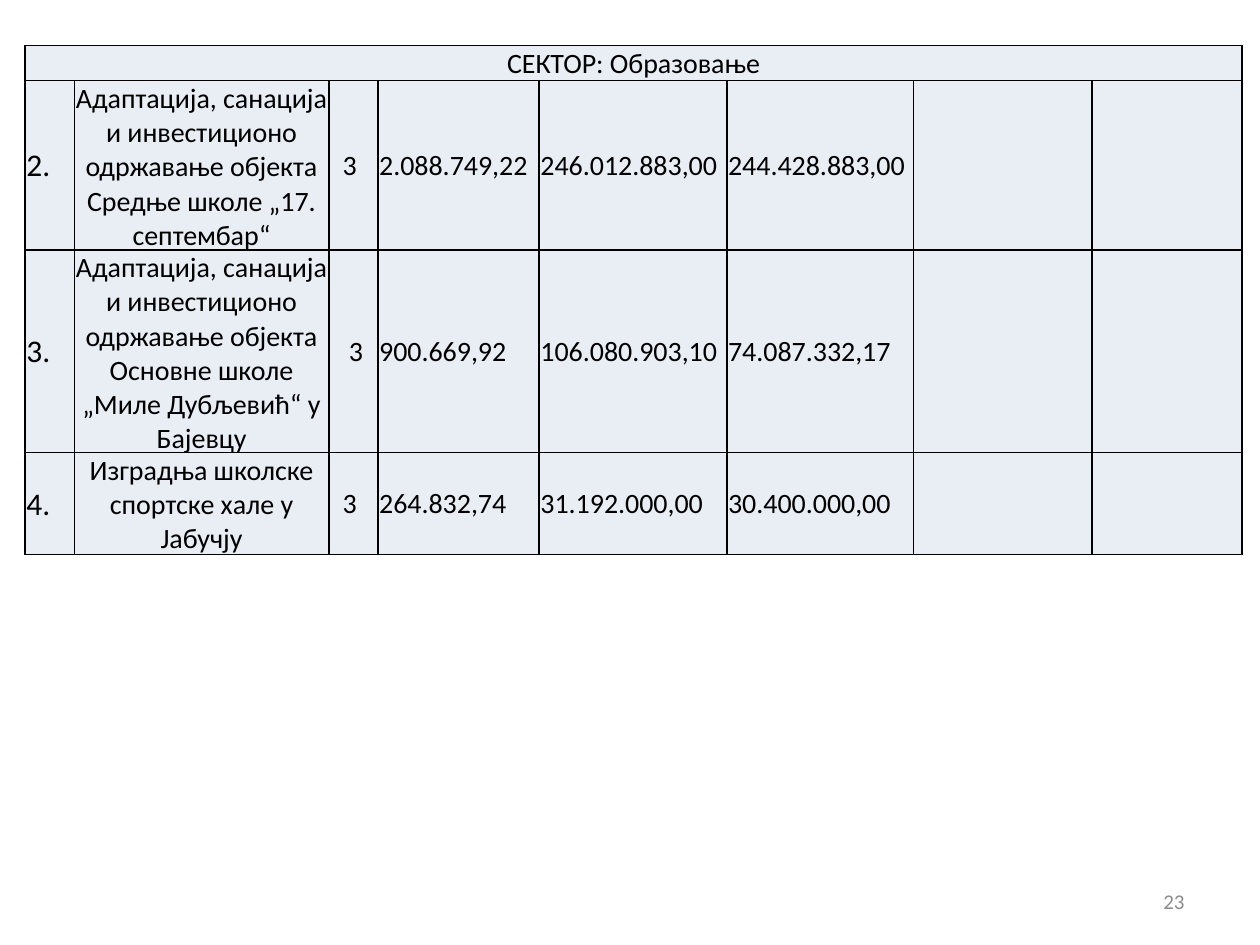
from dataclasses import dataclass

from lxml.etree import SubElement
from pptx import Presentation
from pptx.dml.color import RGBColor
from pptx.enum.text import MSO_ANCHOR as Anchor, PP_ALIGN as Align
from pptx.oxml.ns import qn
from pptx.slide import Slide
from pptx.table import Table, _Cell as Cell
from pptx.text.text import _Paragraph as Paragraph
from pptx.util import Inches, Pt


@dataclass(frozen=True)
class Theme:
    font: str = "Calibri"
    ink: str = "000000"
    muted: str = "8C8C8C"
    cell_fill: str = "E9EDF4"
    body_size: int = 16
    number_size: int = 18
    footer_size: int = 12
    border_width: int = 1


@dataclass(frozen=True)
class Project:
    number: str
    title: str
    priority: str
    amounts: tuple[str, str, str]
    priority_indent: float = 0.11


THEME = Theme()
SECTOR = "СЕКТОР: Образовање"
PROJECTS = (
    Project("2.", "Адаптација, санација и инвестиционо одржавање објекта Средње школе „17. септембар“",
            "3", ("2.088.749,22", "246.012.883,00", "244.428.883,00")),
    Project("3.", "Адаптација, санација и инвестиционо одржавање објекта Основне школе „Миле Дубљевић“ у Бајевцу",
            "3", ("900.669,92", "106.080.903,10", "74.087.332,17"), 0.16),
    Project("4.", "Изградња школске спортске хале у Јабучју",
            "3", ("264.832,74", "31.192.000,00", "30.400.000,00")),
)
COLUMN_WIDTHS = (0.39, 2.02, 0.39, 1.28, 1.49, 1.48, 1.42, 1.19)
ROW_HEIGHTS = (0.28, 0.81, 1.07, 0.54)


def write(paragraph: Paragraph, text: str, size: int, color: str, align: Align) -> None:
    """Fill a paragraph with text in the theme font."""
    paragraph.text = text
    paragraph.alignment = align
    paragraph.font.name = THEME.font
    paragraph.font.size = Pt(size)
    paragraph.font.color.rgb = RGBColor.from_string(color)


def style_cell(cell: Cell) -> None:
    """Give a cell its borders and fill."""
    properties = cell._tc.get_or_add_tcPr()
    for side in ("a:lnL", "a:lnR", "a:lnT", "a:lnB"):
        line = SubElement(properties, qn(side), w=str(Pt(THEME.border_width)))
        SubElement(SubElement(line, qn("a:solidFill")), qn("a:srgbClr"), val=THEME.ink)
    cell.fill.solid()
    cell.fill.fore_color.rgb = RGBColor.from_string(THEME.cell_fill)


def write_cell(cell: Cell, text: str, align: Align, size: int = THEME.body_size, indent: float = 0.01) -> None:
    """Write centred-in-height text with tight cell margins."""
    cell.vertical_anchor = Anchor.MIDDLE
    cell.margin_left = Inches(indent)
    cell.margin_top = cell.margin_right = Inches(0.01)
    cell.margin_bottom = 0
    write(cell.text_frame.paragraphs[0], text, size, THEME.ink, align)


def write_project(table: Table, row: int, project: Project) -> None:
    """Write one project into a table row."""
    write_cell(table.cell(row, 0), project.number, Align.LEFT, THEME.number_size)
    write_cell(table.cell(row, 1), project.title, Align.CENTER)
    write_cell(table.cell(row, 2), project.priority, Align.JUSTIFY, indent=project.priority_indent)
    for column, amount in enumerate(project.amounts, start=3):
        write_cell(table.cell(row, column), amount, Align.JUSTIFY)


def add_project_table(slide: Slide) -> None:
    """Add the table of education projects."""
    frame = slide.shapes.add_table(len(ROW_HEIGHTS), len(COLUMN_WIDTHS),
                                   Inches(0.2), Inches(0.36), Inches(9.66), Inches(4.04))
    table = frame.table
    table.first_row = table.horz_banding = False
    for column, width in zip(table.columns, COLUMN_WIDTHS):
        column.width = Inches(width)
    for row, height in zip(table.rows, ROW_HEIGHTS):
        row.height = Inches(height)
    frame.height = Inches(4.04)
    for cell in table.iter_cells():
        style_cell(cell)
    heading = table.cell(0, 0)
    heading.merge(table.cell(0, len(COLUMN_WIDTHS) - 1))
    write_cell(heading, SECTOR, Align.CENTER)
    for row, project in enumerate(PROJECTS, start=1):
        write_project(table, row, project)


def add_page_number(slide: Slide, number: str) -> None:
    """Add the page number at the lower right."""
    box = slide.shapes.add_textbox(Inches(7.17), Inches(6.95), Inches(2.33), Inches(0.4))
    box.text_frame.word_wrap = True
    box.text_frame.vertical_anchor = Anchor.MIDDLE
    write(box.text_frame.paragraphs[0], number, THEME.footer_size, THEME.muted, Align.RIGHT)


def main() -> None:
    """Build and save the slide."""
    presentation = Presentation()
    presentation.slide_width = Inches(10)
    presentation.slide_height = Inches(7.5)
    slide = presentation.slides.add_slide(presentation.slide_layouts[6])
    add_page_number(slide, "23")
    add_project_table(slide)
    presentation.save("out.pptx")


if __name__ == "__main__":
    main()
